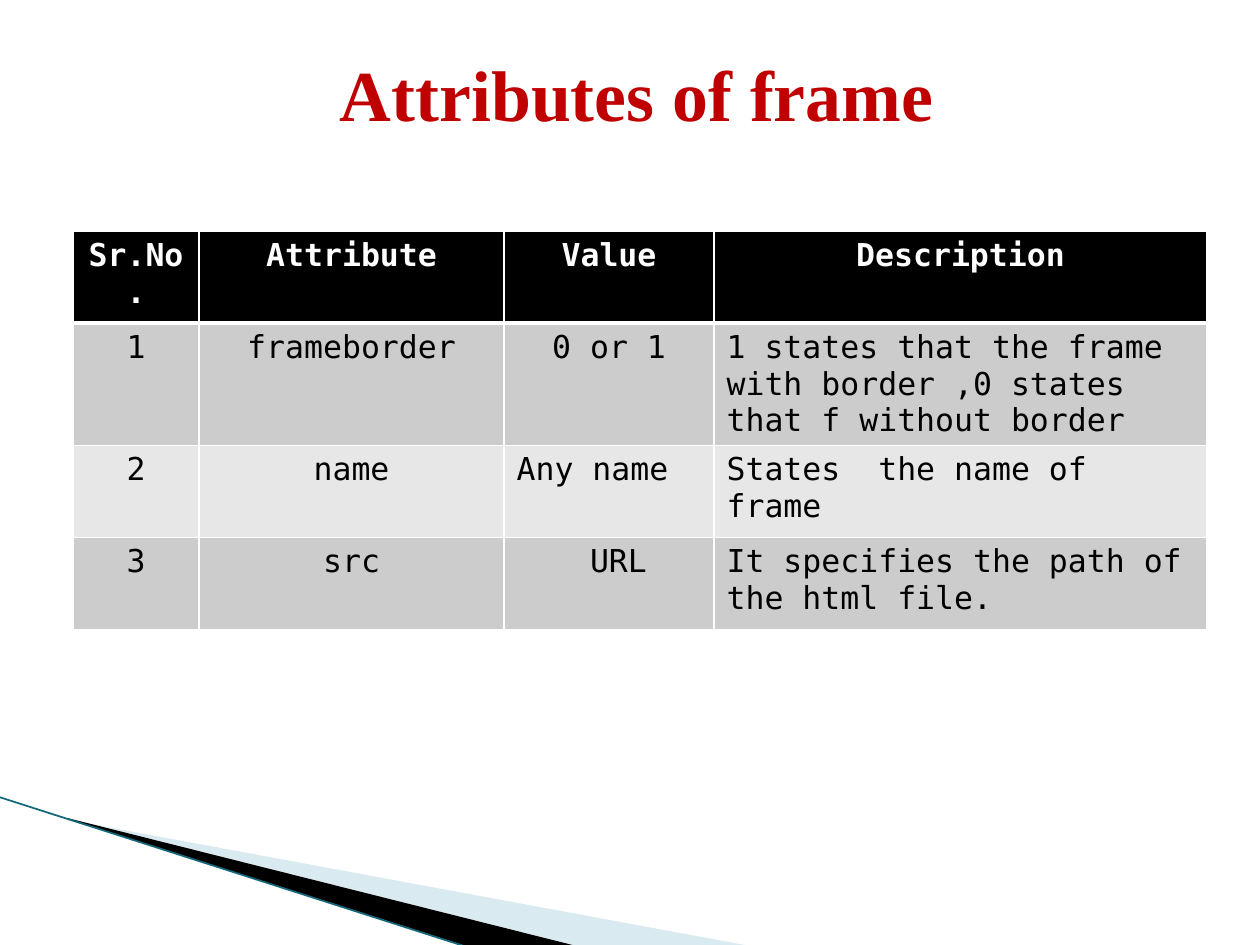
from lxml import etree
from pptx import Presentation
from pptx import util as u
from pptx.dml.color import RGBColor
from pptx.enum import shapes, text
from pptx.oxml import ns

TITLE = " Attributes of frame"
HEADER = ["Sr.No.", "Attribute", "Value", "Description"]
ROWS = [
    ["1", "frameborder", "0 or 1",
     "1 states that the frame with border ,0 states that f without border"],
    ["2", "name", "Any name", "States  the name of frame"],
    ["3", "src", " URL", "It specifies the path of the html file."],
]
LEFT_ALIGNED = {(1, 3), (2, 2), (2, 3), (3, 3)}  # (row, column)
COLUMN_WIDTHS = [126, 305, 210, 493]
ROW_HEIGHT = 92
HEADER_FILL = "000000"
BAND_FILLS = ["CCCCCC", "E7E7E7"]

WEDGES = [  # corners, colour, opacity in percent
    ([(69, 820), (750, 946), (575, 946), (69, 819)], "A0CBDC", 40),
    ([(67, 818), (576, 946), (469, 947), (68, 819)], "000000", 100),
]
EDGE = (-1, 797, 467, 947)


def px(length):
    return u.Emu(round(length * 914400 / 126))


def colour(hex_code):
    return RGBColor.from_string(hex_code)


def write(frame, words, font, size, hex_code, bold=False, align=text.PP_ALIGN.CENTER):
    para = frame.paragraphs[0]
    para.alignment = align
    span = para.add_run()
    span.text = words
    span.font.name = font
    span.font.size = u.Pt(size)
    span.font.bold = bold
    span.font.color.rgb = colour(hex_code)


def add_wedge(page, corners, hex_code, opacity):
    points = [(px(x), px(y)) for x, y in corners]
    builder = page.shapes.build_freeform(*points[0], scale=1.0)
    builder.add_line_segments(points[1:], close=True)
    wedge = builder.convert_to_shape()
    wedge.shadow.inherit = False
    wedge.line.fill.background()
    wedge.fill.solid()
    wedge.fill.fore_color.rgb = colour(hex_code)
    if opacity < 100:
        fill = wedge.fill._xPr.find(ns.qn("a:solidFill"))
        etree.SubElement(fill[0], ns.qn("a:alpha"), val=str(opacity * 1000))


def add_edge(page, x1, y1, x2, y2):
    edge = page.shapes.add_connector(
        shapes.MSO_CONNECTOR.STRAIGHT, px(x1), px(y1), px(x2), px(y2))
    edge.line.color.rgb = colour("14687A")
    edge.line.width = u.Pt(1)
    etree.SubElement(edge._element.spPr, ns.qn("a:effectLst"))


def add_borders(cell, **widths):
    """Draw white borders; widths are points for L, R, T and B."""
    properties = cell._tc.get_or_add_tcPr()
    for side, width in widths.items():
        line = etree.SubElement(properties, ns.qn(f"a:ln{side}"), w=str(u.Pt(width)))
        fill = etree.SubElement(line, ns.qn("a:solidFill"))
        etree.SubElement(fill, ns.qn("a:srgbClr"), val="FFFFFF")


def add_attribute_table(page):
    content = [HEADER] + ROWS
    table = page.shapes.add_table(
        len(content), len(HEADER), px(73), px(231),
        px(sum(COLUMN_WIDTHS)), px(ROW_HEIGHT * len(content))).table
    for column, width in zip(table.columns, COLUMN_WIDTHS):
        column.width = px(width)
    for r, entries in enumerate(content):
        table.rows[r].height = px(ROW_HEIGHT)
        is_header = r == 0
        for c, words in enumerate(entries):
            cell = table.cell(r, c)
            add_borders(cell, L=1, R=1, T=3 if r == 1 else 1, B=3 if is_header else 1)
            cell.fill.solid()
            cell.fill.fore_color.rgb = colour(
                HEADER_FILL if is_header else BAND_FILLS[(r - 1) % 2])
            align = text.PP_ALIGN.LEFT if (r, c) in LEFT_ALIGNED else text.PP_ALIGN.CENTER
            write(cell.text_frame, words, "DejaVu Sans Mono", 18,
                  "FFFFFF" if is_header else "000000", bold=is_header, align=align)


def main():
    deck = Presentation()
    deck.slide_width, deck.slide_height = px(1260), px(945)
    page = deck.slides.add_slide(deck.slide_layouts[5])

    title = page.shapes.title
    title.left, title.top, title.width, title.height = px(63), px(38), px(1134), px(110)
    title.text_frame.vertical_anchor = text.MSO_ANCHOR.MIDDLE
    write(title.text_frame, TITLE, "Times New Roman", 41, "C00000", bold=True)

    for wedge in WEDGES:
        add_wedge(page, *wedge)
    add_edge(page, *EDGE)
    add_attribute_table(page)
    deck.save("out.pptx")


if __name__ == "__main__":
    main()
